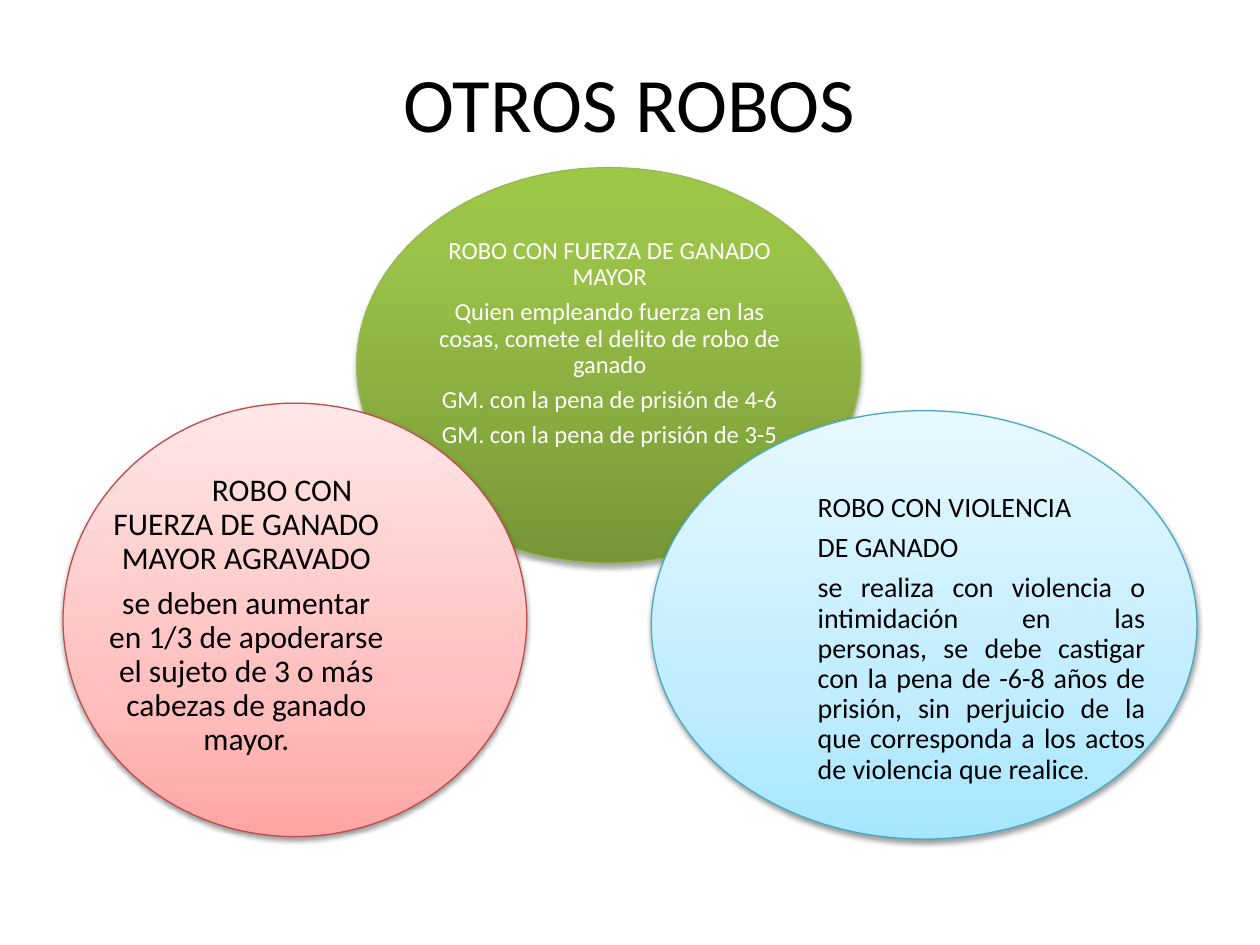
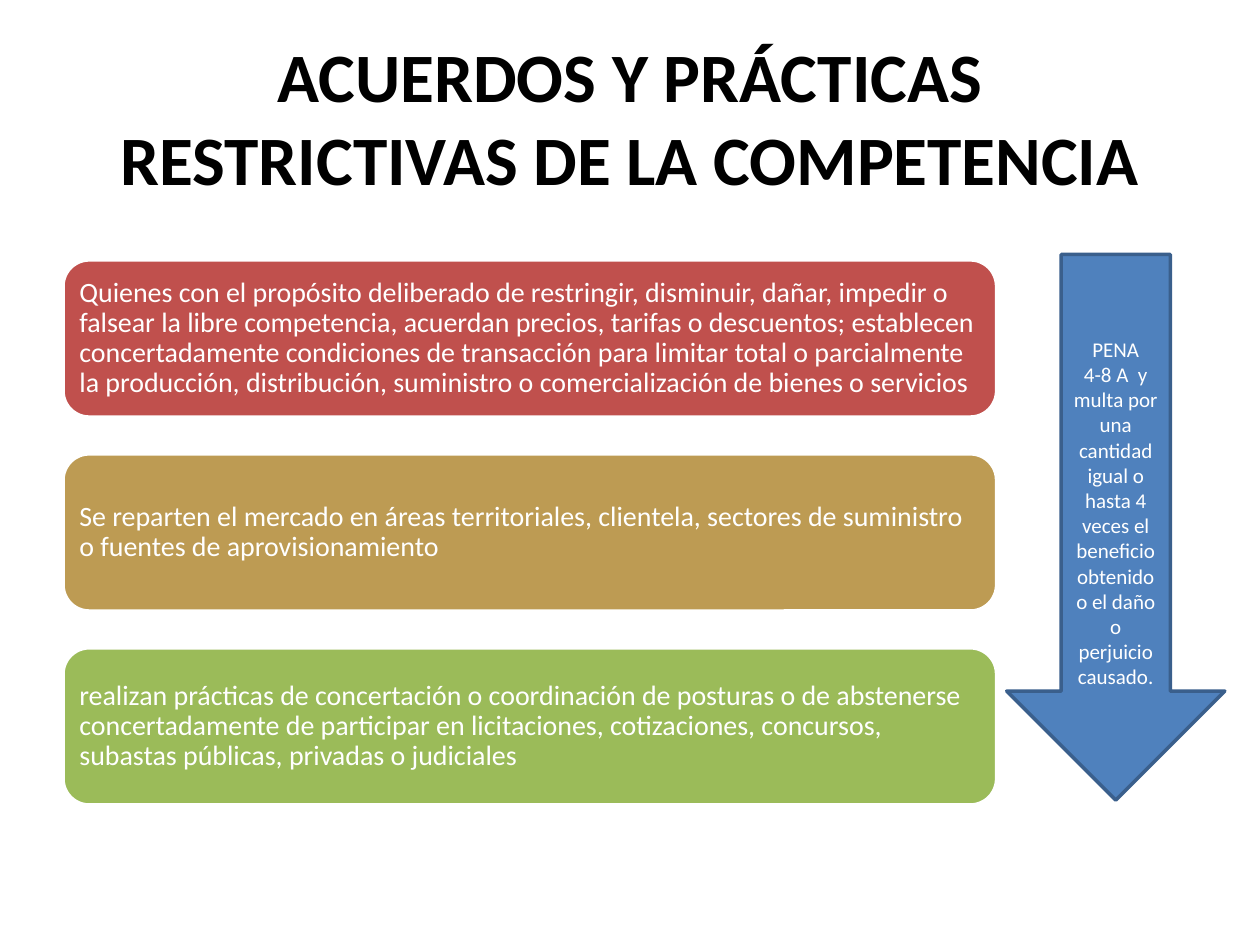
from copy import deepcopy

from lxml import etree
from pptx import Presentation
from pptx.dml.color import RGBColor
from pptx.enum.shapes import MSO_SHAPE
from pptx.enum.text import MSO_ANCHOR, PP_ALIGN
from pptx.oxml.ns import qn
from pptx.util import Pt

ELLIPSE = MSO_SHAPE.OVAL
ROUNDED = MSO_SHAPE.ROUNDED_RECTANGLE
DOWN_ARROW = MSO_SHAPE.DOWN_ARROW
MIDDLE = MSO_ANCHOR.MIDDLE
LEFT, CENTER, JUSTIFY = PP_ALIGN.LEFT, PP_ALIGN.CENTER, PP_ALIGN.JUSTIFY

FONT = "Calibri"
BLACK, WHITE = "000000", "FFFFFF"
GREEN_STOPS = [(0, "779737"), (0.8, "9BC348"), (1, "9DC746")]
BLUE_STOPS = [(0, "A7E6FF"), (0.35, "C1EDFF"), (1, "E7F8FF")]
RED_STOPS = [(0, "FFA6A5"), (0.35, "FFC0BF"), (1, "FFE7E7")]

GREEN_TEXTS = [
    "ROBO CON FUERZA DE GANADO MAYOR",
    "Quien empleando fuerza en las cosas, comete el delito de robo de ganado",
    "GM. con la pena de prisión de 4-6",
    "GM. con la pena de prisión de 3-5",
]
BLUE_TEXTS = [
    "ROBO CON VIOLENCIA",
    "DE GANADO",
    "se realiza con violencia o intimidación en las personas, se debe castigar "
    "con la pena de -6-8 años de prisión, sin perjuicio de la que corresponda "
    "a los actos de violencia que realice",
]
RED_TEXTS = [
    "ROBO CON FUERZA DE GANADO MAYOR AGRAVADO",
    "se deben aumentar en 1/3 de apoderarse el sujeto de 3 o más cabezas de "
    "ganado mayor.",
]
PRACTICES = [
    ("C0504D", "Quienes con el propósito deliberado de restringir, disminuir, "
     "dañar, impedir o falsear la libre competencia, acuerdan precios, tarifas "
     "o descuentos; establecen concertadamente condiciones de transacción para "
     "limitar total o parcialmente la producción, distribución, suministro o "
     "comercialización de bienes o servicios"),
    ("BD9B53", "Se reparten el mercado en áreas territoriales, clientela, "
     "sectores de suministro o fuentes de aprovisionamiento"),
    ("9BBB59", "realizan prácticas de concertación o coordinación de posturas o "
     "de abstenerse concertadamente de participar en licitaciones, "
     "cotizaciones, concursos, subastas públicas, privadas o judiciales"),
]
PENALTY_TEXTS = [
    "PENA",
    "4-8 A  y multa por una cantidad igual o hasta 4 veces el beneficio "
    "obtenido o el daño o perjuicio causado.",
]


def color(value):
    return RGBColor.from_string(value)


def to_points(box):
    return [Pt(length) for length in box]


def write(shape, texts, size, font_color, align, margins=(0, 0, 0, 0),
          bold=False, compact=True):
    frame = shape.text_frame
    frame.word_wrap = True
    frame.vertical_anchor = MIDDLE
    (frame.margin_left, frame.margin_top,
     frame.margin_right, frame.margin_bottom) = to_points(margins)
    for index, text in enumerate(texts):
        paragraph = frame.add_paragraph() if index else frame.paragraphs[0]
        paragraph.add_run().text = text
        paragraph.alignment = align
        if compact:
            paragraph.line_spacing = 0.9
            paragraph.space_after = Pt(round(size * 0.35, 1))
        paragraph.font.name = FONT
        paragraph.font.size = Pt(size)
        paragraph.font.bold = bold
        paragraph.font.color.rgb = color(font_color)
    return frame.paragraphs


def add_text(slide, box, *args, **options):
    return write(slide.shapes.add_textbox(*to_points(box)), *args, **options)


def add_title(slide, box, text, size, bold=False):
    add_text(slide, box, [text], size, BLACK, CENTER, (7.2, 3.6, 7.2, 3.6),
             bold, compact=False)


def add_outlined(slide, kind, box, line_color, line_width):
    shape = slide.shapes.add_shape(kind, *to_points(box))
    shape.shadow.inherit = False
    shape.line.color.rgb = color(line_color)
    shape.line.width = Pt(line_width)
    return shape


def fill_gradient(shape, stops):
    shape.fill.gradient()
    shape.fill.gradient_angle = 90
    first = shape.fill.gradient_stops[0]
    stop_list = shape.element.spPr.find(qn("a:gradFill")).find(qn("a:gsLst"))
    stop_list.append(deepcopy(stop_list[0]))
    for stop, (position, value) in zip(shape.fill.gradient_stops, stops):
        stop.position = position
        stop.color.rgb = color(value)


def add_shadow(shape, opacity, distance):
    effects = shape.element.spPr.find(qn("a:effectLst"))
    shadow = etree.SubElement(
        effects, qn("a:outerShdw"), blurRad=str(Pt(3.1)),
        dist=str(Pt(distance)), dir="5400000", rotWithShape="0")
    tint = etree.SubElement(shadow, qn("a:srgbClr"), val=BLACK)
    etree.SubElement(tint, qn("a:alpha"), val=str(opacity * 1000))


def add_bubble(slide, box, stops, line_color, opacity, distance, text_box,
               texts, size, font_color, align):
    bubble = add_outlined(slide, ELLIPSE, box, line_color, 0.75)
    fill_gradient(bubble, stops)
    add_shadow(bubble, opacity, distance)
    left, top, width, height = text_box
    return add_text(slide, (box[0] + left, box[1] + top, width, height),
                    texts, size, font_color, align)


def add_practices(slide, box, gap):
    left, top, width, height = box
    card_height = (height - gap * (len(PRACTICES) - 1)) / len(PRACTICES)
    for index, (fill, text) in enumerate(PRACTICES):
        card_top = top + index * (card_height + gap)
        card = add_outlined(slide, ROUNDED, (left, card_top, width, card_height),
                            WHITE, 2)
        card.fill.solid()
        card.fill.fore_color.rgb = color(fill)
        write(card, [text], 16, WHITE, LEFT, (5, 5, 5, 5))


def add_penalty(slide, box):
    arrow = add_outlined(slide, DOWN_ARROW, box, "3A5F8C", 2)
    arrow.fill.solid()
    arrow.fill.fore_color.rgb = color("4F81BD")
    write(arrow, PENALTY_TEXTS, 12, WHITE, CENTER, (7.2, 18, 7.2, 3.6),
          compact=False)


def build_robberies(slide):
    add_title(slide, (36, 21.6, 648, 72.7), "OTROS ROBOS", 44)
    add_bubble(slide, (203.8, 95.8, 288, 226), GREEN_STOPS, "98B955", 35, 1.8,
               (38.8, 39, 211.7, 123), GREEN_TEXTS, 14, WHITE, CENTER)
    violence = add_bubble(
        slide, (372.2, 234.7, 311.8, 244.8), BLUE_STOPS, "46AAC5", 38, 1.6,
        (95.1, 63.4, 187.2, 134.6), BLUE_TEXTS, 16, BLACK, JUSTIFY)
    period = violence[-1].add_run()
    period.text = "."
    period.font.size = Pt(11)
    aggravated = add_bubble(
        slide, (36, 230.4, 265, 247.7), RED_STOPS, "BF4C48", 38, 1.6,
        (25.2, 39.6, 159.1, 164), RED_TEXTS, 18, BLACK, CENTER)
    aggravated[0]._p.get_or_add_pPr().set("indent", str(Pt(41)))


def build_competition(slide):
    add_title(slide, (36, 21.6, 648, 90),
              "ACUERDOS Y PRÁCTICAS RESTRICTIVAS DE LA COMPETENCIA", 39.6, True)
    add_practices(slide, (36, 148.5, 533.5, 311.5), 21)
    add_penalty(slide, (575.3, 145.4, 124.6, 311.8))


def main():
    presentation = Presentation()
    presentation.slide_width = Pt(720)
    presentation.slide_height = Pt(540)
    for build in (build_robberies, build_competition):
        build(presentation.slides.add_slide(presentation.slide_layouts[6]))
    presentation.save("out.pptx")


if __name__ == "__main__":
    main()
